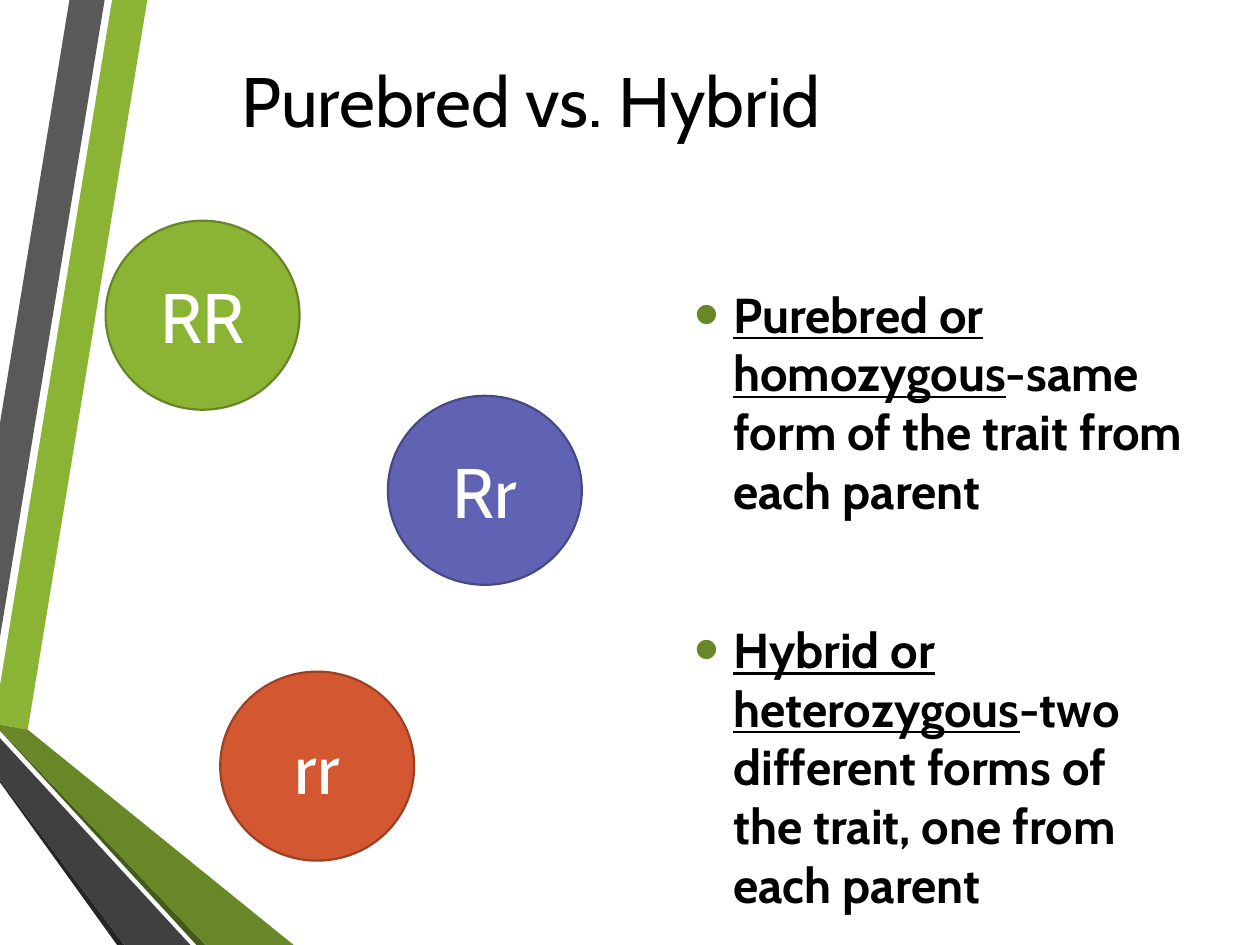
from lxml import etree
from pptx import Presentation
from pptx import util as u
from pptx.dml import color
from pptx.enum import shapes, text
from pptx.oxml import ns

FONT = "Cabin"
RIBBONS = [
    ("8BB434", [(0, 13.82), (0, 14.61), (0.56, 14.71), (2.97, 0), (2.26, 0)]),
    ("595959", [(2.11, 0), (1.4, 0), (0, 8.53), (0, 12.85)]),
    ("262626", [(0, 15.72), (0, 15.77), (2.36, 19.05), (2.51, 19.05)]),
    ("465A1A", [(0, 14.71), (0, 14.73), (3.96, 19.05), (4.14, 19.05)]),
    ("688727", [(0, 14.71), (4.14, 19.05), (5.92, 19.05), (0.56, 14.71), (0, 14.61)]),
    ("404040", [(0, 15.72), (2.51, 19.05), (3.84, 19.05), (0, 14.88)]),
]
GENOTYPES = [
    ("RR", 0, 0, "8BB434", "678526"),
    ("Rr", 5.69, 3.53, "6063B4", "474985"),
    ("rr", 2.31, 9.09, "D35731", "9C4024"),
]
DEFINITIONS = [
    ("Purebred or homozygous", "-same form of the trait from each parent"),
    ("Hybrid or heterozygous", "-two different forms of the trait, one from each parent"),
]


def rgb(value):
    return color.RGBColor.from_string(value)


def place(shape, box):
    shape.left, shape.top, shape.width, shape.height = map(u.Cm, box)


def style(span, size, value):
    span.font.name = FONT
    span.font.size = u.Pt(size)
    span.font.color.rgb = rgb(value)


def set_frame(shape):
    frame = shape.text_frame
    frame.word_wrap = True
    frame.auto_size = text.MSO_AUTO_SIZE.NONE
    frame.vertical_anchor = text.MSO_ANCHOR.MIDDLE
    return frame


def write_label(shape, label, value):
    frame = set_frame(shape)
    frame.text = label
    para = frame.paragraphs[0]
    para.alignment = text.PP_ALIGN.CENTER
    style(para.runs[0], 40, value)


def add_bullet(para, value):
    properties = para._p.get_or_add_pPr()
    indent = u.Cm(0.79)
    properties.set("marL", str(indent))
    properties.set("indent", str(-indent))
    tint = etree.SubElement(properties, ns.qn("a:buClr"))
    etree.SubElement(tint, ns.qn("a:srgbClr"), val=value)
    etree.SubElement(properties, ns.qn("a:buSzPct"), val="145000")
    etree.SubElement(properties, ns.qn("a:buFont"), typeface="Arial")
    etree.SubElement(properties, ns.qn("a:buChar"), char="•")


def draw_ribbons(slide, left, top):
    for fill, corners in RIBBONS:
        points = [((left + x) * 100, (top + y) * 100) for x, y in corners]
        builder = slide.shapes.build_freeform(*points[0], scale=u.Cm(0.01))
        builder.add_line_segments(points[1:], close=True)
        ribbon = builder.convert_to_shape()
        ribbon.shadow.inherit = False
        ribbon.fill.solid()
        ribbon.fill.fore_color.rgb = rgb(fill)
        ribbon.line.fill.background()


def draw_title(slide, box):
    title = slide.shapes.title
    place(title, box)
    write_label(title, "Purebred vs. Hybrid", "000000")


def draw_definitions(slide, box):
    body = slide.placeholders[1]
    place(body, box)
    frame = set_frame(body)
    for index, (term, meaning) in enumerate(DEFINITIONS):
        para = frame.add_paragraph() if index else frame.paragraphs[0]
        para.space_before = u.Pt(51 if index else 6)
        para.space_after = u.Pt(6)
        add_bullet(para, "688727")
        for words, underlined in ((term, True), (meaning, False)):
            span = para.add_run()
            span.text = words
            style(span, 28, "000000")
            span.font.bold = True
            span.font.underline = underlined


def draw_genotypes(slide, left, top):
    for label, x, y, fill, outline in GENOTYPES:
        circle = slide.shapes.add_shape(shapes.MSO_SHAPE.OVAL, 0, 0, 0, 0)
        place(circle, (left + x, top + y, 3.91, 3.81))
        circle.shadow.inherit = False
        circle.fill.solid()
        circle.fill.fore_color.rgb = rgb(fill)
        circle.line.color.rgb = rgb(outline)
        circle.line.width = u.Pt(1.25)
        write_label(circle, label, "FFFFFF")


def main():
    deck = Presentation()
    deck.slide_width, deck.slide_height = u.Cm(25.4), u.Cm(19.05)
    page = deck.slides.add_slide(deck.slide_layouts[1])
    draw_ribbons(page, 0, 0)
    draw_title(page, (0, -0.43, 21.41, 4.88))
    draw_definitions(page, (13.74, 7.42, 10.39, 9.3))
    draw_genotypes(page, 2.13, 4.45)
    deck.save("out.pptx")


if __name__ == "__main__":
    main()
